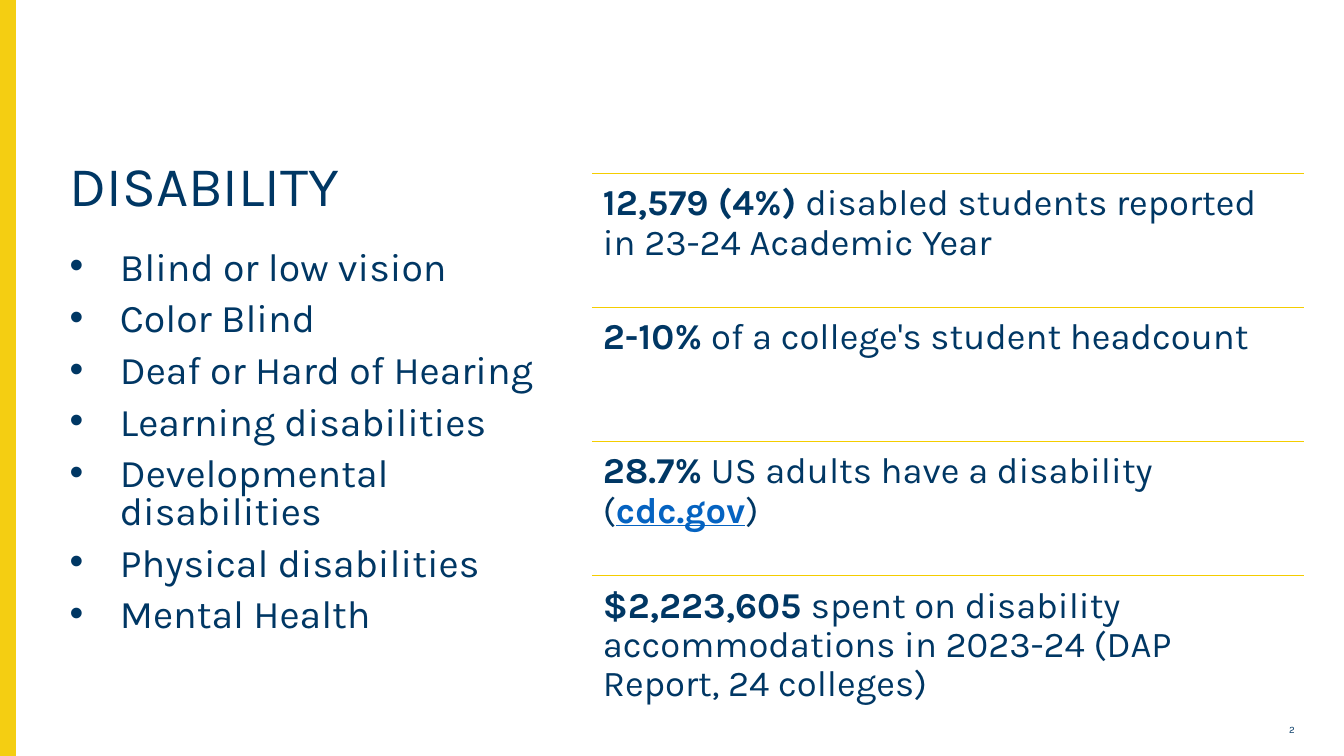
from dataclasses import dataclass

from lxml.etree import SubElement
from pptx import Presentation
from pptx.dml.color import RGBColor
from pptx.enum.shapes import MSO_CONNECTOR, MSO_SHAPE
from pptx.enum.text import MSO_ANCHOR as ANCHOR, MSO_AUTO_SIZE, PP_ALIGN as ALIGN
from pptx.oxml.ns import qn
from pptx.util import Inches, Pt

COLORS = {"navy": "003764", "bar": "F4CE12", "rule": "F4CD00", "link": "0563C1"}
FONT = "Karla"
STAT_LEFT, STAT_TOP, STAT_WIDTH, STAT_STEP = 5.87, 1.72, 7.06, 1.33
DISABILITIES = [
    "Blind or low vision",
    "Color Blind",
    "Deaf or Hard of Hearing",
    "Learning disabilities",
    "Developmental disabilities",
    "Physical disabilities",
    "Mental Health",
]


@dataclass(frozen=True)
class Span:
    text: str
    bold: bool = False
    underline: bool = False
    color: str = "navy"


@dataclass(frozen=True)
class Stat:
    spans: tuple[Span, ...]


STATS = [
    Stat((Span("12,579 (4%)", True),
          Span(" disabled students reported in 23-24 Academic Year"))),
    Stat((Span("2-10%", True), Span(" of a college's student headcount"))),
    Stat((Span("28.7%", True), Span(" US adults have a disability ("),
          Span("cdc.gov", True, True, "link"), Span(")"))),
    Stat((Span("$2,223,605 ", True),
          Span("spent on disability accommodations in 2023-24 (DAP Report, 24 colleges)"))),
]


def rgb(name: str) -> RGBColor:
    return RGBColor.from_string(COLORS[name])


def set_attrs(obj, values: dict) -> None:
    for name, value in values.items():
        setattr(obj, name, value)


def place(sp, left: float, top: float, width: float, height: float) -> None:
    set_attrs(sp, {"left": Inches(left), "top": Inches(top),
                   "width": Inches(width), "height": Inches(height)})


def setup_frame(sp, anchor=ANCHOR.TOP, inset: float | None = None):
    tf = sp.text_frame
    set_attrs(tf, {"word_wrap": True, "auto_size": MSO_AUTO_SIZE.NONE,
                   "vertical_anchor": anchor})
    if inset is not None:
        sides = ("left", "top", "right", "bottom")
        set_attrs(tf, {f"margin_{side}": Inches(inset) for side in sides})
    return tf


def add_span(p, span: Span, size: float) -> None:
    r = p.add_run()
    r.text = span.text
    set_attrs(r.font, {"name": FONT, "size": Pt(size), "bold": span.bold,
                       "underline": span.underline})
    r.font.color.rgb = rgb(span.color)


def add_bar(s, height: float) -> None:
    sp = s.shapes.add_shape(MSO_SHAPE.RECTANGLE, 0, 0, Inches(0.15), Inches(height))
    sp.shadow.inherit = False
    sp.fill.solid()
    sp.fill.fore_color.rgb = sp.line.color.rgb = rgb("bar")
    sp.line.width = Pt(1)


def fill_title(sp) -> None:
    place(sp, 0.59, 1.52, 4.9, 1.54)
    p = setup_frame(sp).paragraphs[0]
    set_attrs(p, {"alignment": ALIGN.LEFT, "line_spacing": 0.9})
    add_span(p, Span("DISABILITY"), 40)


def fill_list(sp, items: list[str]) -> None:
    place(sp, 0.59, 2.44, 4.9, 4.28)
    tf = setup_frame(sp)
    for i, item in enumerate(items):
        p = tf.add_paragraph() if i else tf.paragraphs[0]
        set_attrs(p, {"alignment": ALIGN.LEFT, "line_spacing": 0.8,
                      "space_before": Pt(10 if i else 0)})
        pPr = p._p.get_or_add_pPr()
        pPr.set("marL", str(Inches(0.5)))
        pPr.set("indent", str(-Inches(0.5)))
        SubElement(pPr, qn("a:buFont"), typeface="Arial")
        SubElement(pPr, qn("a:buChar"), char="•")
        add_span(p, Span(item), 28)


def add_stat(s, stat: Stat, top: float) -> None:
    left, y = Inches(STAT_LEFT), Inches(top)
    line = s.shapes.add_connector(MSO_CONNECTOR.STRAIGHT, left, y,
                                  left + Inches(STAT_WIDTH), y)
    line.line.color.rgb = rgb("rule")
    line.line.width = Pt(1)
    SubElement(line._element.spPr, qn("a:effectLst"))
    sp = s.shapes.add_textbox(left, y, Inches(STAT_WIDTH), Inches(STAT_STEP))
    p = setup_frame(sp, inset=0.11).paragraphs[0]
    p.line_spacing = 0.9
    for span in stat.spans:
        add_span(p, span, 26)


def add_page_number(s, number: int) -> None:
    sp = s.shapes.add_textbox(Inches(12.27), Inches(7.14), Inches(0.67), Inches(0.21))
    p = setup_frame(sp, ANCHOR.MIDDLE).paragraphs[0]
    set_attrs(p, {"alignment": ALIGN.RIGHT, "line_spacing": 0.9})
    add_span(p, Span(str(number)), 7)


def main() -> None:
    """Build the disability statistics slide."""
    prs = Presentation()
    set_attrs(prs, {"slide_width": Inches(13.33), "slide_height": Inches(7.5)})
    s = prs.slides.add_slide(prs.slide_layouts[1])
    add_bar(s, 7.5)
    fill_title(s.shapes.title)
    fill_list(s.placeholders[1], DISABILITIES)
    add_page_number(s, 2)
    for i, stat in enumerate(STATS):
        add_stat(s, stat, STAT_TOP + i * STAT_STEP)
    prs.save("out.pptx")


if __name__ == "__main__":
    main()
